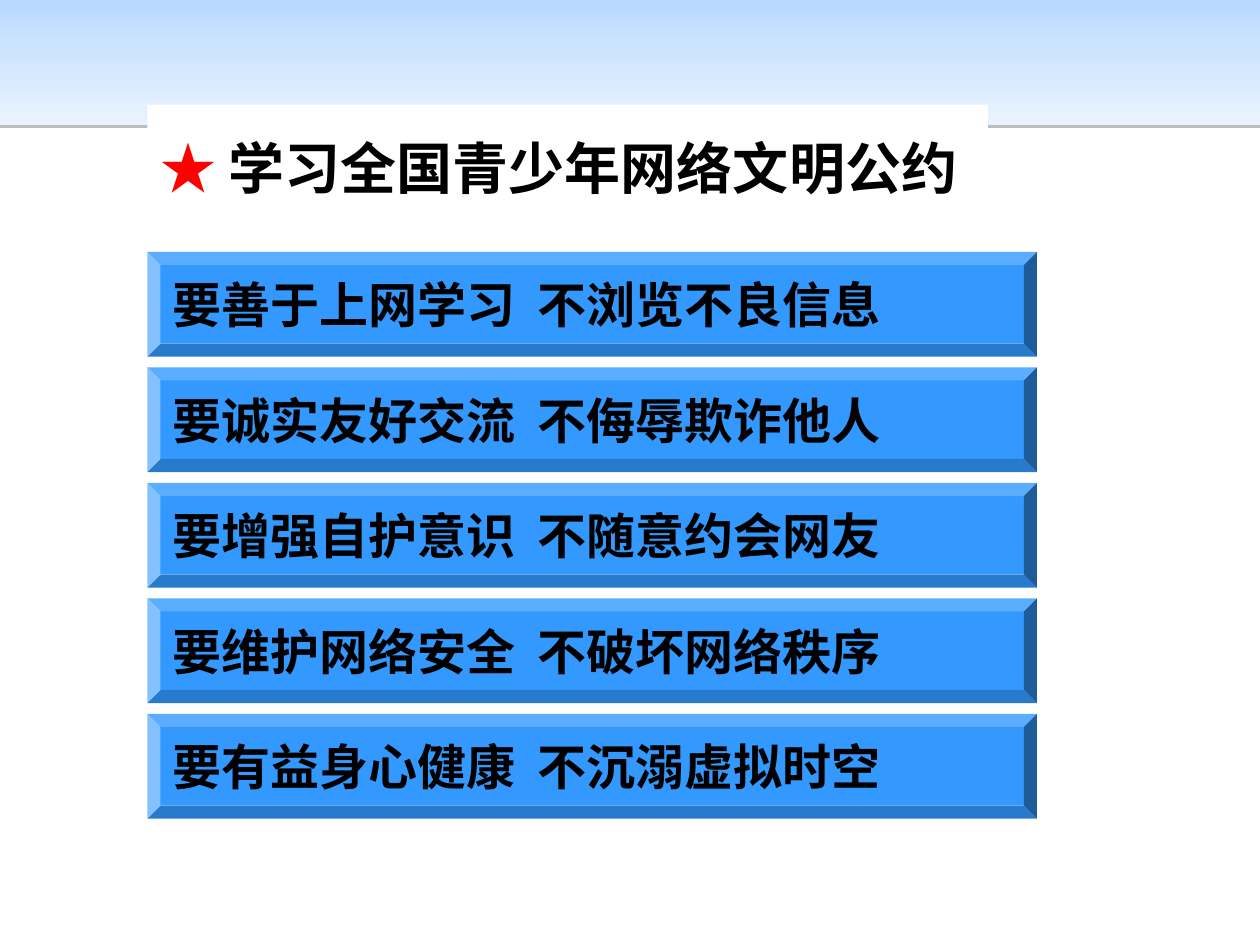
from copy import deepcopy
from dataclasses import dataclass

from lxml.etree import SubElement
from pptx import Presentation
from pptx.dml.color import RGBColor
from pptx.enum.shapes import MSO_SHAPE as Preset
from pptx.enum.text import MSO_ANCHOR as Anchor, PP_ALIGN as Align
from pptx.oxml.ns import qn
from pptx.util import Inches, Pt

BLACK = RGBColor(0x00, 0x00, 0x00)
WHITE = RGBColor(0xFF, 0xFF, 0xFF)
RED = RGBColor(0xFF, 0x00, 0x00)
RULE_BLUE = RGBColor(0x33, 0x99, 0xFF)
BANNER_TOP = RGBColor(0xB7, 0xD9, 0xFF)
BANNER_MIDDLE = RGBColor(0xCB, 0xE3, 0xFF)
BANNER_BOTTOM = RGBColor(0xE8, 0xF3, 0xFF)

CJK_FONT = "Noto Sans CJK SC"
LEFT = Inches(1.17)
FIRST_RULE_TOP = 2
RULE_PITCH = 5.5 / 6


@dataclass(frozen=True)
class TextRun:
    text: str
    size: int
    font: str = CJK_FONT
    color: RGBColor = BLACK


HEADING = [
    TextRun("★ ", 32, "Times New Roman", RED),
    TextRun("学习全国青少年网络文明公约", 32, "Times New Roman"),
]
RULES = [
    TextRun("要善于上网学习  不浏览不良信息", 28),
    TextRun("要诚实友好交流  不侮辱欺诈他人", 28),
    TextRun("要增强自护意识  不随意约会网友", 28),
    TextRun("要维护网络安全  不破坏网络秩序", 28),
    TextRun("要有益身心健康  不沉溺虚拟时空", 28),
]


def write_line(shape, text_runs: list[TextRun]) -> None:
    frame = shape.text_frame
    frame.word_wrap = True
    frame.vertical_anchor = Anchor.MIDDLE
    frame.margin_left = frame.margin_right = Inches(0.1)
    frame.margin_top = frame.margin_bottom = Inches(0.05)
    paragraph = frame.paragraphs[0]
    paragraph.alignment = Align.LEFT
    for item in text_runs:
        run = paragraph.add_run()
        run.text = item.text
        run.font.size = Pt(item.size)
        run.font.bold = True
        run.font.name = item.font
        run.font.color.rgb = item.color
        east_asian = SubElement(run.font._element, qn("a:ea"))
        east_asian.set("typeface", CJK_FONT)
        run.font._element.find(qn("a:latin")).addnext(east_asian)


def add_banner(slide, width: int) -> None:
    banner = slide.shapes.add_shape(Preset.RECTANGLE, 0, 0, width, Inches(0.99))
    banner.line.fill.background()
    banner.shadow.inherit = False
    banner.fill.gradient()
    banner.fill.gradient_angle = 270
    properties = banner._element.spPr
    stop_list = properties.find(".//" + qn("a:gsLst"))
    stop_list.insert(1, deepcopy(stop_list[0]))
    colors = [(0, BANNER_TOP), (0.35, BANNER_MIDDLE), (1, BANNER_BOTTOM)]
    for stop, (position, color) in zip(banner.fill.gradient_stops, colors):
        stop.position = position
        stop.color.rgb = color

    shadow = SubElement(
        properties.find(qn("a:effectLst")), qn("a:outerShdw"),
        dist=str(Pt(1.6)), dir="5400000", algn="t", rotWithShape="0",
    )
    shade = SubElement(shadow, qn("a:srgbClr"), val=str(BLACK))
    SubElement(shade, qn("a:alpha"), val="25000")
    slide.shapes._spTree.insert(2, banner._element)


def add_heading(slide) -> None:
    title = slide.shapes.title
    title.left, title.top = LEFT, Inches(0.83)
    title.width, title.height = Inches(6.67), Inches(1)
    title.fill.solid()
    title.fill.fore_color.rgb = WHITE
    write_line(title, HEADING)


def add_rule(slide, index: int, rule: TextRun) -> None:
    top = Inches(FIRST_RULE_TOP + index * RULE_PITCH)
    plate = slide.shapes.add_shape(Preset.BEVEL, LEFT, top, Inches(7.06), Inches(0.83))
    plate.adjustments[0] = 0.125
    plate.fill.solid()
    plate.fill.fore_color.rgb = RULE_BLUE
    plate.line.fill.background()
    plate.shadow.inherit = False
    write_line(plate, [rule])


def main() -> None:
    deck = Presentation()
    deck.slide_width, deck.slide_height = Inches(10), Inches(7.5)
    slide = deck.slides.add_slide(deck.slide_layouts[5])
    add_banner(slide, deck.slide_width)
    add_heading(slide)
    for index, rule in enumerate(RULES):
        add_rule(slide, index, rule)
    deck.save("out.pptx")


if __name__ == "__main__":
    main()
